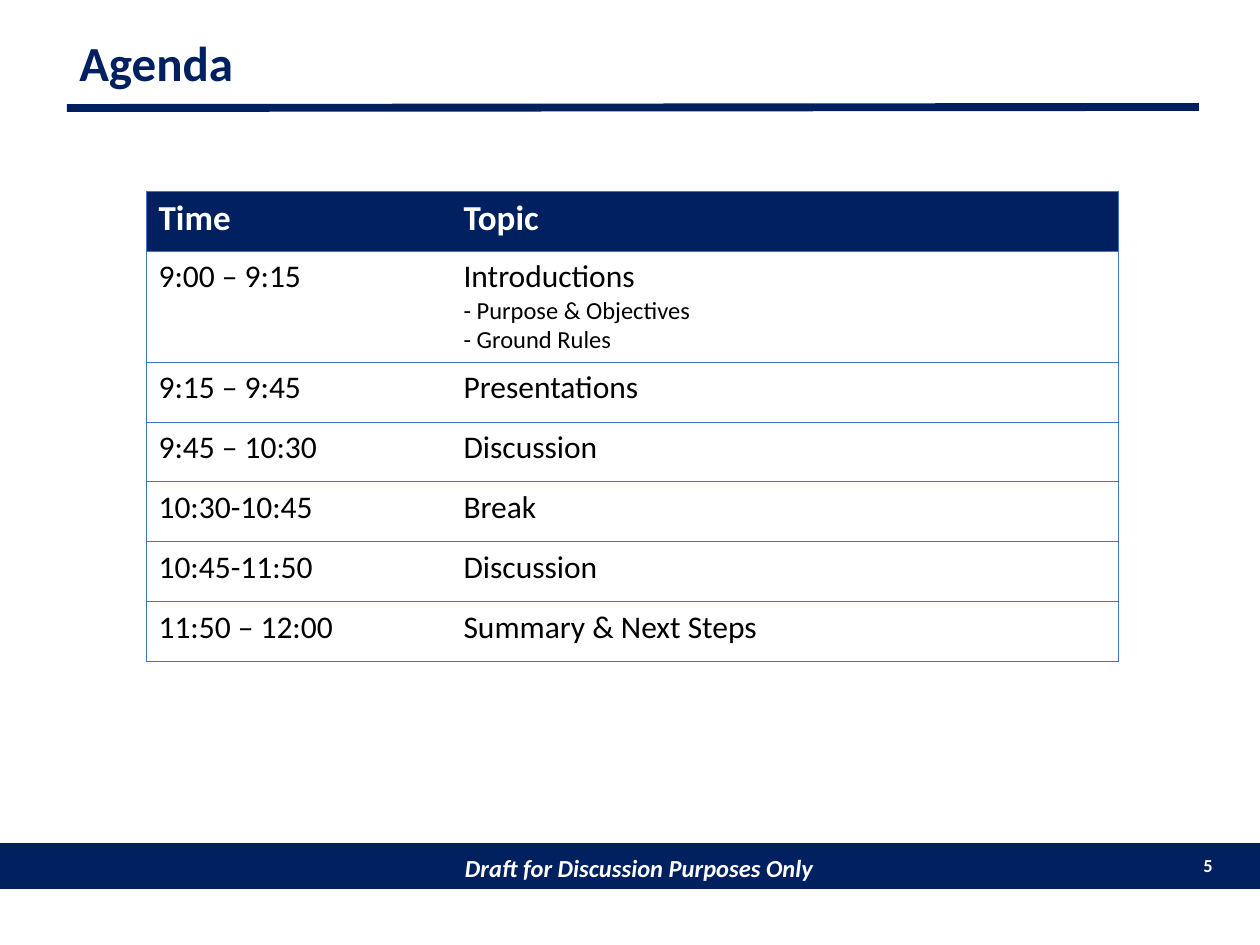
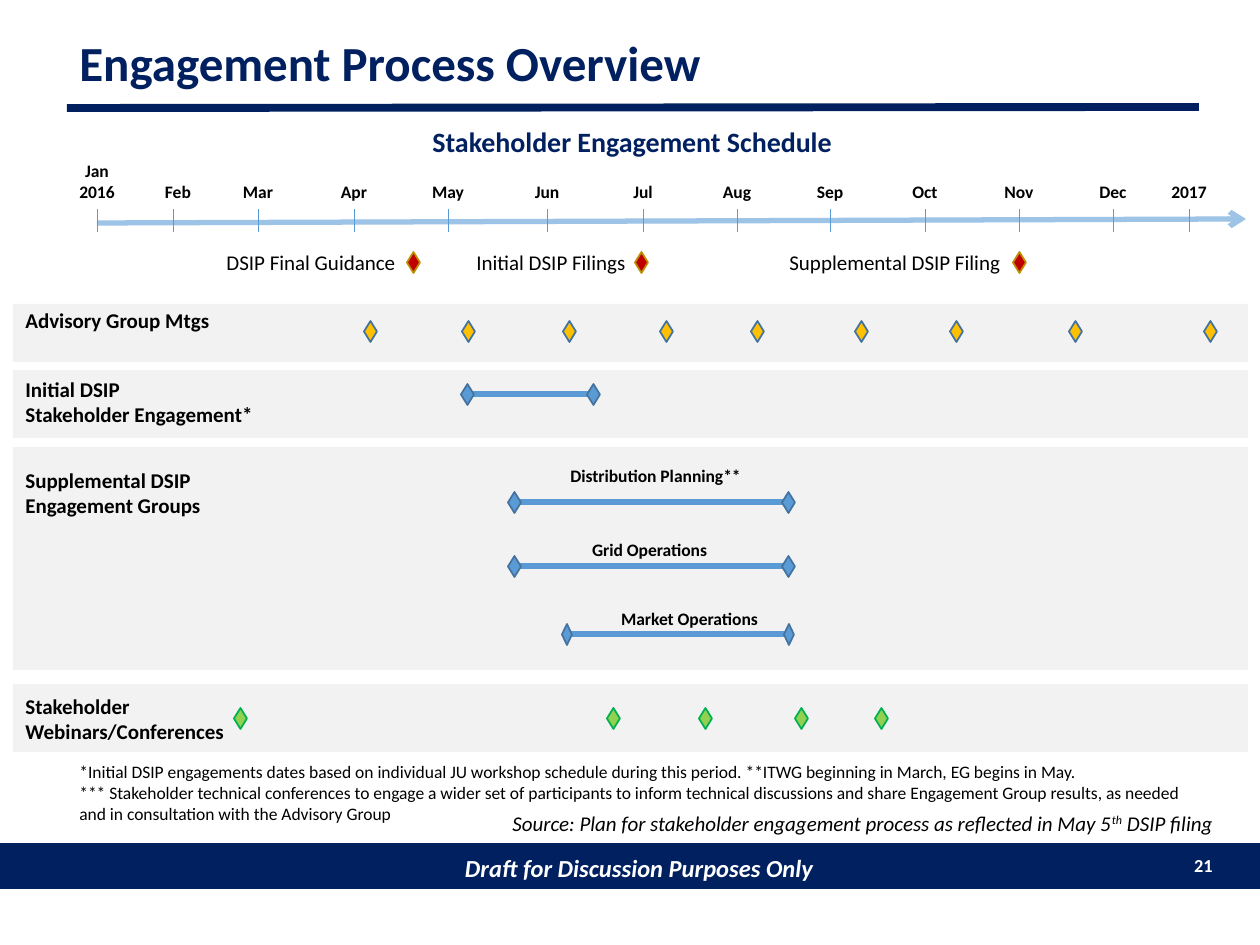
from dataclasses import dataclass

from lxml import etree
from pptx import Presentation
from pptx.dml.color import RGBColor as Rgb
from pptx.enum.shapes import MSO_CONNECTOR as Link, MSO_SHAPE as Shape
from pptx.enum.text import MSO_ANCHOR as Anchor, PP_ALIGN as Align
from pptx.oxml.ns import qn
from pptx.util import Pt


@dataclass(frozen=True)
class Theme:
    font: str = "Calibri"
    navy: str = "002060"
    white: str = "FFFFFF"
    black: str = "000000"
    lane: str = "F2F2F2"
    grid: str = "4472C4"
    axis: str = "9DC3E6"
    blue: str = "5B9BD5"
    edge: str = "43739E"
    title: float = 28
    head: float = 20
    body: float = 18
    sub: float = 16
    foot: float = 14
    label: float = 12
    page: float = 10.5
    small: float = 10


T = Theme()
RED = ("C00000", "BD8E00")
GOLD = ("FFC000", T.edge)
BLUE = (T.blue, T.edge)
GREEN = ("92D050", "00B050")

AGENDA = [
    ("Time", "Topic"),
    ("9:00 – 9:15", "Introductions\n- Purpose & Objectives\n- Ground Rules"),
    ("9:15 – 9:45", "Presentations"),
    ("9:45 – 10:30", "Discussion"),
    ("10:30-10:45", "Break"),
    ("10:45-11:50", "Discussion"),
    ("11:50 – 12:00", "Summary & Next Steps"),
]
MONTHS = [
    ("Jan 2016", 0), ("Feb", 76), ("Mar", 161), ("Apr", 257), ("May", 351),
    ("Jun", 450), ("Jul", 546), ("Aug", 640), ("Sep", 733), ("Oct", 828),
    ("Nov", 922), ("Dec", 1016), ("2017", 1092),
]
FILINGS = [
    ("DSIP Final Guidance", 117, 197, 316),
    ("Initial DSIP Filings", 367, 176, 544),
    ("Supplemental DSIP Filing", 680, 247, 922),
]
GROUPS = [
    ("Distribution Planning**", (535, 12, 215), (501, 775, 55)),
    ("Grid Operations", (529, 86, 215), (501, 775, 119)),
    ("Market Operations", (589, 155, 175), (554, 776, 187)),
]
NOTES = (
    "*Initial DSIP engagements dates based on individual JU workshop schedule "
    "during this period. **ITWG beginning in March, EG begins in May.\n"
    "*** Stakeholder technical conferences to engage a wider set of participants "
    "to inform technical discussions and share Engagement Group results, "
    "as needed and in consultation with the Advisory Group"
)


def px(num):
    return round(num * 914400 / 126)


def write(frame, text, size=T.body, color=T.black, bold=False, italic=False,
          align=None, rest=None, space=None):
    """Fill a frame: newlines part paragraphs, carets enclose superscripts.

    rest is the type size of all paragraphs after the first.
    """
    for row, line in enumerate(text.split("\n")):
        para = frame.add_paragraph() if row else frame.paragraphs[0]
        para.alignment = align
        para.line_spacing = space
        for part, words in enumerate(line.split("^")):
            run = para.add_run()
            run.text = words
            font = run.font
            font.name, font.bold, font.italic = T.font, bold, italic
            font.size = Pt(rest if row and rest else size)
            font.color.rgb = Rgb.from_string(color)
            if part % 2:
                run._r.get_or_add_rPr().set("baseline", "30000")


def put(slide, box, text, wrap=True, anchor=Anchor.TOP, **style):
    frame = slide.shapes.add_textbox(*map(px, box)).text_frame
    frame.word_wrap = wrap
    frame.vertical_anchor = anchor
    write(frame, text, **style)


def draw(slide, kind, box, fill, edge=None):
    shape = slide.shapes.add_shape(kind, *map(px, box))
    shape.shadow.inherit = False
    shape.fill.solid()
    shape.fill.fore_color.rgb = Rgb.from_string(fill)
    if edge:
        shape.line.color.rgb = Rgb.from_string(edge)
        shape.line.width = Pt(1)
    else:
        shape.line.fill.background()
    return shape


def rule(slide, start, end, color, width, arrow=False):
    line = slide.shapes.add_connector(Link.STRAIGHT, *map(px, start + end))
    line.line.color.rgb = Rgb.from_string(color)
    line.line.width = Pt(width)
    if arrow:
        tail = etree.SubElement(line.line._get_or_add_ln(), qn("a:tailEnd"))
        tail.set("type", "arrow")
    etree.SubElement(line._element.spPr, qn("a:effectLst"))


def mark(slide, x, y, tint, wide=13):
    """Draw a diamond centred on x, y."""
    draw(slide, Shape.FLOWCHART_DECISION, (x - wide // 2, y - 10, wide, 21), *tint)


def span(slide, left, right, y, wide=13):
    rule(slide, (left, y), (right, y), T.blue, 3)
    for x in (left, right):
        mark(slide, x, y, BLUE, wide)


def start(deck, title, page):
    """Add a slide with the shared title, rule and footer band."""
    slide = deck.slides.add_slide(deck.slide_layouts[6])
    band = draw(slide, Shape.RECTANGLE, (0, 843, 1260, 46), T.navy)
    frame = band.text_frame
    frame.margin_left, frame.margin_top = px(31), px(9)
    frame.vertical_anchor = Anchor.MIDDLE
    write(frame, "Draft for Discussion Purposes Only", size=T.foot,
          color=T.white, bold=True, italic=True, align=Align.CENTER)
    put(slide, (1173, 848, 52, 37), str(page), size=T.page, color=T.white,
        bold=True, align=Align.RIGHT)
    rule(slide, (67, 108), (1199, 107), T.navy, 4.5)
    put(slide, (67, 31, 1133, 69), title, anchor=Anchor.MIDDLE, size=T.title,
        color=T.navy, bold=True, space=0.9)
    return slide


def edges(cell, sides):
    """Line the named sides of a cell and clear the others."""
    props = cell._tc.get_or_add_tcPr()
    for side in "LRTB":
        line = etree.SubElement(props, qn("a:ln" + side), w=str(Pt(0.5)))
        if side in sides:
            fill = etree.SubElement(line, qn("a:solidFill"))
            etree.SubElement(fill, qn("a:srgbClr"), val=T.grid)
        else:
            etree.SubElement(line, qn("a:noFill"))


def plan(slide, box):
    table = slide.shapes.add_table(len(AGENDA), 2, *map(px, box)).table
    table.horz_banding = False
    for col, wide in zip(table.columns, (305, box[2] - 305)):
        col.width = px(wide)
    for row, texts in enumerate(AGENDA):
        table.rows[row].height = px(111 if "\n" in texts[1] else 60)
        for col, text in enumerate(texts):
            cell = table.cell(row, col)
            edges(cell, "TB" + "LR"[col])
            if row:
                cell.fill.background()
                write(cell.text_frame, text, rest=T.foot)
            else:
                cell.fill.solid()
                cell.fill.fore_color.rgb = Rgb.from_string(T.navy)
                write(cell.text_frame, text, size=T.head, color=T.white, bold=True)


def axis(slide, box):
    """Draw the year arrow, its month ticks and the filing dates below."""
    left, top, wide, high = box
    rule(slide, (left, top + 14), (left + wide, top + 10), T.axis, 3, arrow=True)
    for name, at in MONTHS:
        x = left + at
        rule(slide, (x, top), (x, top + high), T.blue, 0.5)
        tall = 55 if " " in name else 34
        nudge = 5 if name == "Feb" else 0
        put(slide, (x + nudge - 32, top - tall, 64, tall), name, size=T.small,
            bold=True, align=Align.CENTER)
    for name, at, room, day in FILINGS:
        put(slide, (left + at, top + 34, room, 38), name, wrap=False, size=T.label)
        mark(slide, left + day, top + 53, RED)


def lane(slide, box, text, room, drop):
    left, top = box[:2]
    draw(slide, Shape.RECTANGLE, box, T.lane)
    put(slide, (left, top + drop, room, 63 if "\n" in text else 38), text,
        wrap=False, size=T.label, bold=True)


def dates(slide, box, text, room, drop, days, y, tint):
    """Draw a lane with one diamond for each day."""
    lane(slide, box, text, room, drop)
    for day in days:
        mark(slide, box[0] + day, box[1] + y, tint)


def teams(slide, box):
    left, top = box[:2]
    lane(slide, box, "Supplemental DSIP\nEngagement Groups", 203, 14)
    for name, (x, y, room), (first, last, mid) in GROUPS:
        put(slide, (left + x, top + y, room, 34), name, size=T.small,
            bold=True, align=Align.CENTER)
        span(slide, left + first, left + last, top + mid,
             10 if name == "Market Operations" else 13)


def first(deck):
    plan(start(deck, "Agenda", 5), (146, 191, 972, 471))


def second(deck):
    slide = start(deck, "Engagement Process Overview", 21)
    put(slide, (420, 118, 525, 47), "Stakeholder Engagement Schedule",
        size=T.sub, color=T.navy, bold=True)
    axis(slide, (97, 209, 1149, 23))
    dates(slide, (13, 304, 1235, 58), "Advisory Group Mtgs", 212, -3,
          (357, 455, 556, 653, 744, 848, 943, 1062, 1197), 27, GOLD)
    lane(slide, (13, 370, 1235, 68), "Initial DSIP\nStakeholder Engagement*", 256, 0)
    span(slide, 467, 593, 394)
    teams(slide, (13, 447, 1235, 223))
    dates(slide, (13, 684, 1235, 68), "Stakeholder\nWebinars/Conferences", 226, 3,
          (227, 600, 692, 788, 868), 34, GREEN)
    put(slide, (67, 755, 1137, 77), NOTES, size=T.small)
    put(slide, (500, 804, 747, 38),
        "Source: Plan for stakeholder engagement process as reflected in "
        "May 5^th^ DSIP filing", size=T.label, italic=True)


def main():
    deck = Presentation()
    deck.slide_width, deck.slide_height = px(1260), px(945)
    first(deck)
    second(deck)
    deck.save("out.pptx")


if __name__ == "__main__":
    main()
